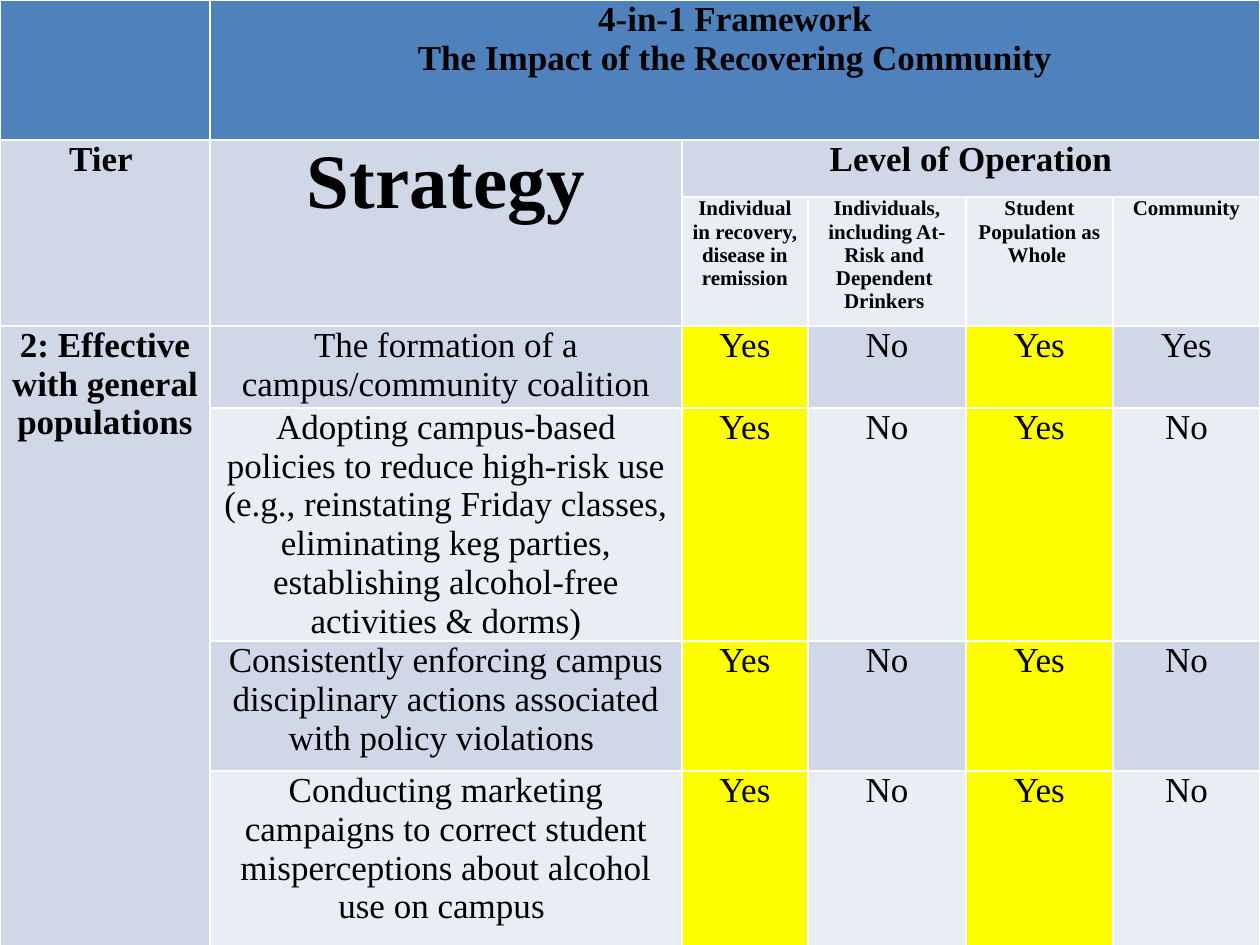
from pptx import Presentation
from pptx.dml.color import RGBColor
from pptx.enum.text import MSO_ANCHOR, PP_ALIGN
from pptx.util import Emu, Pt

FONT = "Times New Roman"
BLACK = RGBColor(0x00, 0x00, 0x00)
HEADER_BLUE = RGBColor(0x4F, 0x81, 0xBD)
DARK_BAND = RGBColor(0xD0, 0xD8, 0xE8)
LIGHT_BAND = RGBColor(0xE9, 0xED, 0xF4)
YELLOW = RGBColor(0xFF, 0xFF, 0x00)
SKY_TOP = RGBColor(0x8E, 0xB4, 0xE3)
SKY_BOTTOM = RGBColor(0xE1, 0xE8, 0xF5)

COLUMN_WIDTHS = [210, 472, 126, 158, 147, 147]
ROW_HEIGHTS = [140, 57, 129, 82, 176, 130, 192]
TABLE_HEIGHT = 983
HIGHLIGHTED_COLUMNS = (2, 4)
LEVELS = [
    "Individual in recovery, disease in remission",
    "Individuals, including At-Risk and \nDependent \nDrinkers ",
    "Student Population as Whole ",
    "Community",
]
STRATEGIES = [
    ("The formation of a campus/community coalition", "Yes", "No", "Yes", "Yes"),
    ("Adopting campus-based policies to reduce high-risk use (e.g., reinstating "
     "Friday classes, eliminating keg parties, establishing alcohol-free "
     "activities & dorms)", "Yes", "No", "Yes", "No"),
    ("Consistently enforcing campus disciplinary actions associated with policy "
     "violations ", "Yes", "No", "Yes", "No"),
    ("Conducting marketing campaigns to correct student misperceptions about "
     "alcohol use on campus ", "Yes", "No", "Yes", "No"),
]


def px(length):
    """Turn pixels into EMU at 126 pixels to the inch."""
    return Emu(round(length * 914400 / 126))


def set_background(slide):
    """Give the slide a vertical blue gradient."""
    fill = slide.background.fill
    fill.gradient()
    fill.gradient_angle = 270
    for stop, color in zip(fill.gradient_stops, (SKY_TOP, SKY_BOTTOM)):
        stop.color.rgb = color


def add_grid(slide):
    """Add the empty table with its column widths and row heights."""
    frame = slide.shapes.add_table(
        len(ROW_HEIGHTS), len(COLUMN_WIDTHS), 0, 0,
        px(sum(COLUMN_WIDTHS)), px(TABLE_HEIGHT))
    table = frame.table
    for column, width in zip(table.columns, COLUMN_WIDTHS):
        column.width = px(width)
    for row, height in zip(table.rows, ROW_HEIGHTS):
        row.height = px(height)
    frame.height = px(TABLE_HEIGHT)
    return table


def write_cell(cell, *paragraphs, fill, size=20, bold=True):
    """Fill a cell and write centred paragraphs into it."""
    cell.fill.solid()
    cell.fill.fore_color.rgb = fill
    cell.margin_left = cell.margin_right = px(9)
    cell.margin_top = cell.margin_bottom = 0
    cell.vertical_anchor = MSO_ANCHOR.TOP
    for index, text in enumerate(paragraphs):
        frame = cell.text_frame
        paragraph = frame.add_paragraph() if index else frame.paragraphs[0]
        paragraph.text = text
        paragraph.alignment = PP_ALIGN.CENTER
        for run in paragraph.runs:
            run.font.name = FONT
            run.font.size = Pt(size)
            run.font.bold = bold
            run.font.color.rgb = BLACK


def write_headings(table):
    """Write the title row and the column headings."""
    table.cell(0, 1).merge(table.cell(0, 5))
    table.cell(1, 0).merge(table.cell(2, 0))
    table.cell(1, 1).merge(table.cell(2, 1))
    table.cell(1, 2).merge(table.cell(1, 5))
    write_cell(table.cell(0, 0), fill=HEADER_BLUE)
    write_cell(table.cell(0, 1), "4-in-1 Framework",
               "The Impact of the Recovering Community", fill=HEADER_BLUE)
    write_cell(table.cell(1, 0), "Tier ", fill=DARK_BAND)
    write_cell(table.cell(1, 1), "Strategy", fill=DARK_BAND, size=44)
    write_cell(table.cell(1, 2), "Level of Operation", fill=DARK_BAND)
    for column, level in enumerate(LEVELS, start=2):
        write_cell(table.cell(2, column), level, fill=LIGHT_BAND, size=12)


def write_strategies(table):
    """Write the tier cell and one banded row for each strategy."""
    table.cell(3, 0).merge(table.cell(6, 0))
    write_cell(table.cell(3, 0), "2: Effective with general populations",
               fill=DARK_BAND)
    for row, strategy in enumerate(STRATEGIES, start=3):
        band = DARK_BAND if row % 2 else LIGHT_BAND
        for column, text in enumerate(strategy, start=1):
            fill = YELLOW if column in HIGHLIGHTED_COLUMNS else band
            write_cell(table.cell(row, column), text, fill=fill, bold=False)


def main():
    """Build and save the slide."""
    presentation = Presentation()
    presentation.slide_width = px(1260)
    presentation.slide_height = px(945)
    slide = presentation.slides.add_slide(presentation.slide_layouts[6])
    set_background(slide)
    table = add_grid(slide)
    write_headings(table)
    write_strategies(table)
    presentation.save("out.pptx")


if __name__ == "__main__":
    main()
